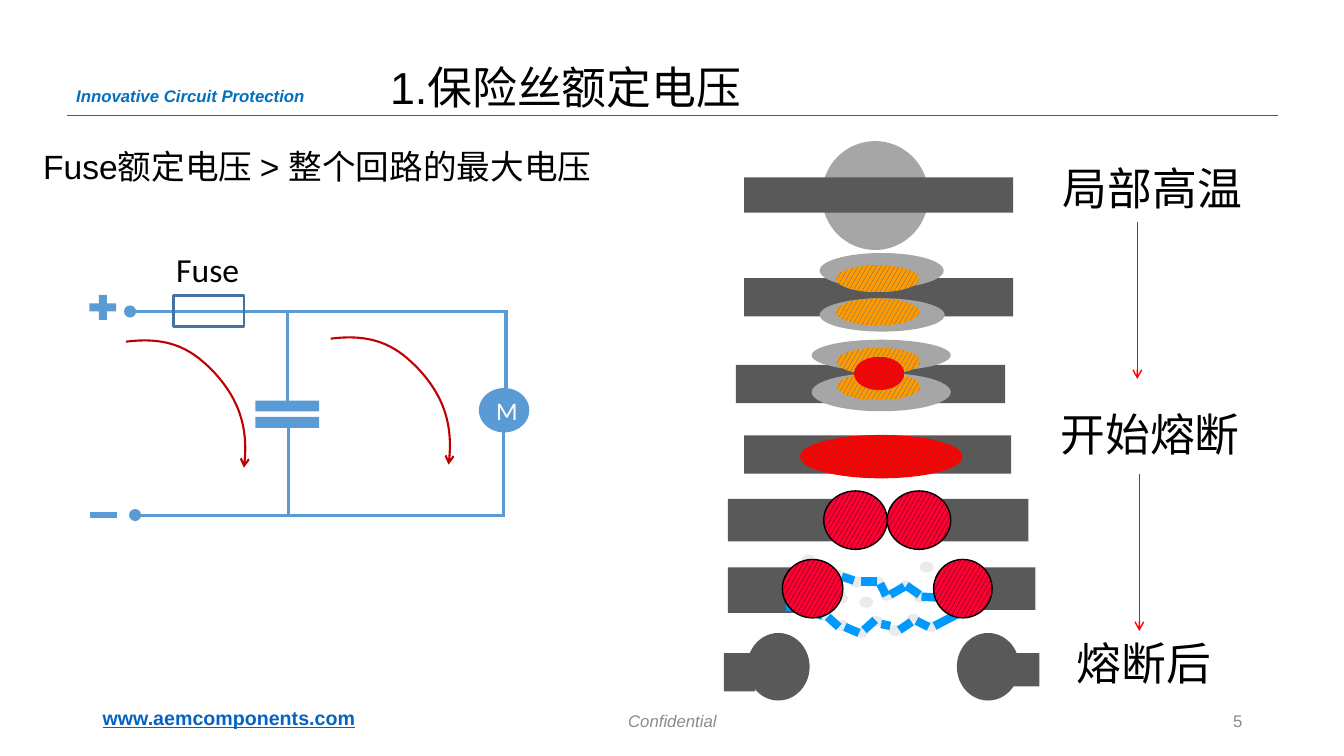
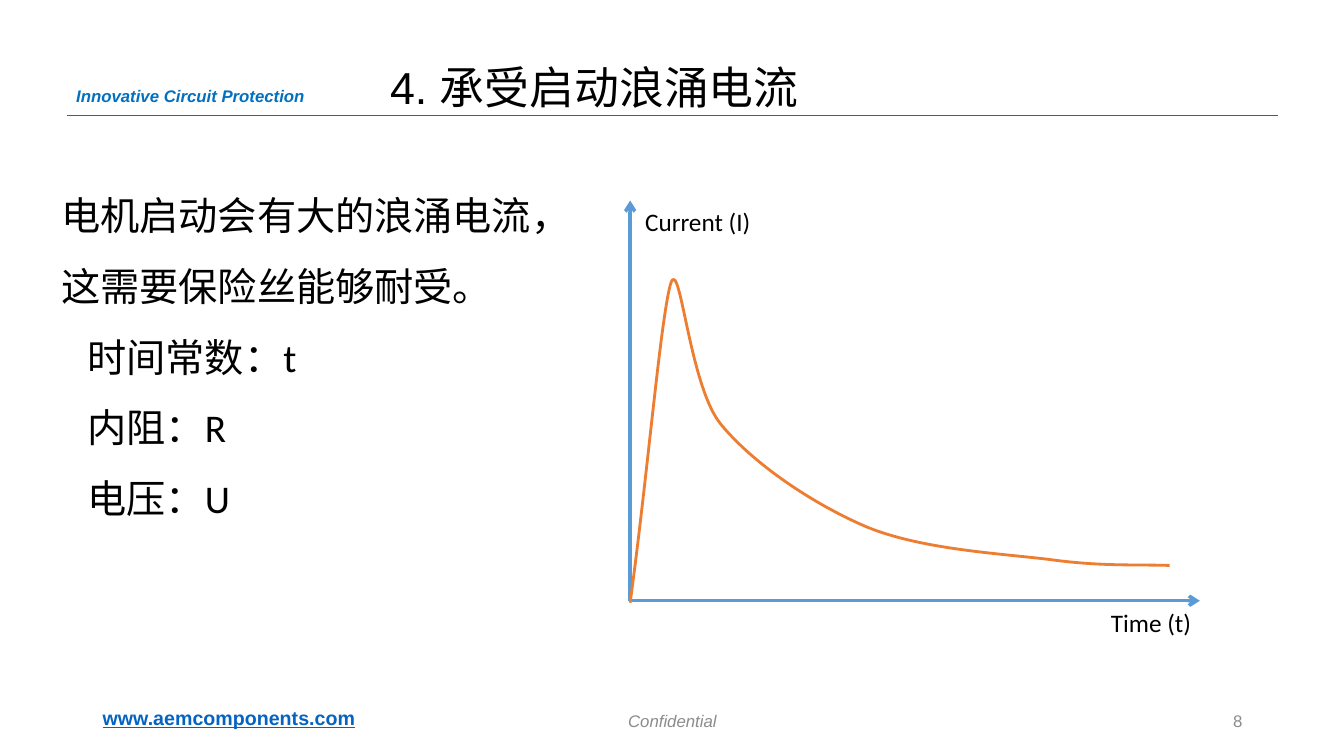
import dataclasses

import lxml.etree
import pptx
import pptx.dml.color
import pptx.enum.dml
import pptx.enum.shapes
import pptx.enum.text
import pptx.oxml.ns
import pptx.util

Inches, Pt = pptx.util.Inches, pptx.util.Pt
qn = pptx.oxml.ns.qn
SHAPE = pptx.enum.shapes.MSO_SHAPE
ALIGN = pptx.enum.text.PP_ALIGN
MIDDLE = pptx.enum.text.MSO_ANCHOR.MIDDLE
CONFETTI = pptx.enum.dml.MSO_PATTERN.LARGE_CONFETTI


@dataclasses.dataclass(frozen=True)
class Theme:
    head: str = "Arial"
    body: str = "Calibri"
    title: int = 32
    lead: int = 28
    sub: int = 24
    label: int = 18
    link: int = 14
    small: int = 12
    text: str = "000000"
    white: str = "FFFFFF"
    grey: str = "8C8C8C"
    rule: str = "595959"
    brand: str = "0070C0"
    url: str = "0563C1"
    wire: str = "5B9BD5"
    fuse: str = "43739E"
    flow: str = "C00000"
    step: str = "FF0000"
    curve: str = "ED7D31"
    spark: str = "0099FF"
    metal: str = "595959"
    glow: str = "A6A6A6"
    smoke: str = "EAEAEA"
    # patterned fills: foreground, background
    warm: tuple = ("0563C1", "FF9900")
    molten: tuple = ("44546A", "FF0000")
    drop: tuple = ("000000", "FF0033")


T = Theme()


def rgb(value):
    return pptx.dml.color.RGBColor.from_string(value)


def set_line(line, color, width, arrow=False):
    line.color.rgb = rgb(color)
    line.width = Pt(width)
    if arrow:
        ln = line._get_or_add_ln()
        lxml.etree.SubElement(ln, qn("a:tailEnd"), type="arrow")


def write(tf, lines, size, color=T.text, align=ALIGN.LEFT, spacing=None, indents=(), **fmt):
    tf.word_wrap = True
    for i, line in enumerate(lines):
        p = tf.paragraphs[0] if i == 0 else tf.add_paragraph()
        if i < len(indents):
            p._p.get_or_add_pPr().set("marL", str(Inches(indents[i])))
        p.alignment = align
        if spacing:
            p.line_spacing = spacing
        r = p.add_run()
        r.text = line
        r.font.color.rgb = rgb(color)
        for key, value in {"name": T.head, "size": Pt(size), **fmt}.items():
            setattr(r.font, key, value)


@dataclasses.dataclass
class Region:
    """Draws parts at offsets from its top left corner."""
    shapes: object
    x: float = 0
    y: float = 0

    def point(self, x, y):
        return Inches(self.x + x), Inches(self.y + y)

    def group(self, x=0, y=0):
        return Region(self.shapes.add_group_shape().shapes, self.x + x, self.y + y)

    def text(self, x, y, w, h, lines, size, anchor=None, **fmt):
        tf = self.shapes.add_textbox(*self.point(x, y), Inches(w), Inches(h)).text_frame
        if anchor is not None:
            tf.vertical_anchor = anchor
        write(tf, [lines] if isinstance(lines, str) else lines, size, **fmt)

    def shape(self, kind, x, y, w, h, fill=None, line=None):
        sp = self.shapes.add_shape(kind, *self.point(x, y), Inches(w), Inches(h))
        sp.shadow.inherit = False
        if fill is None:
            sp.fill.background()
        elif isinstance(fill, tuple):
            sp.fill.patterned()
            sp.fill.pattern = CONFETTI
            sp.fill.fore_color.rgb, sp.fill.back_color.rgb = map(rgb, fill)
        else:
            sp.fill.solid()
            sp.fill.fore_color.rgb = rgb(fill)
        if line:
            set_line(sp.line, *line)
        else:
            sp.line.fill.background()
        return sp

    def rect(self, *args, **kw):
        return self.shape(SHAPE.RECTANGLE, *args, **kw)

    def oval(self, *args, **kw):
        return self.shape(SHAPE.OVAL, *args, **kw)

    def line(self, x1, y1, x2, y2, color, width, arrow=False):
        kind = pptx.enum.shapes.MSO_CONNECTOR.STRAIGHT
        sp = self.shapes.add_connector(kind, *self.point(x1, y1), *self.point(x2, y2))
        set_line(sp.line, color, width, arrow)
        lxml.etree.SubElement(sp._element.spPr, qn("a:effectLst"))

    def bezier(self, points, color, width, arrow=False):
        """Start point, then three points for each cubic segment."""
        start, *rest = [self.point(*pt) for pt in points]
        builder = self.shapes.build_freeform(*start)
        builder.add_line_segments(rest, close=False)
        sp = builder.convert_to_shape()
        sp.shadow.inherit = False
        sp.fill.background()
        set_line(sp.line, color, width, arrow)
        outline = next(sp._element.iter(qn("a:path")))
        steps = outline.findall(qn("a:lnTo"))
        for i in range(0, len(steps), 3):
            cubic = lxml.etree.SubElement(outline, qn("a:cubicBezTo"))
            for step in steps[i:i + 3]:
                cubic.append(step[0])
                outline.remove(step)


def base_slide(prs, title, number):
    s = prs.slides.add_slide(prs.slide_layouts[6])
    page = Region(s.shapes)
    # Header
    page.text(0.6, 0.83, 2.58, 0.19, "Innovative Circuit Protection", T.small,
              color=T.brand, align=ALIGN.CENTER, spacing=0.85, bold=True, italic=True)
    page.line(0.66, 1.14, 12.68, 1.14, T.rule, 0.5)
    page.text(3.77, 0.28, 8.13, 0.91, title, T.title, spacing=1.5)
    # Footer
    page.text(0.92, 6.95, 3, 0.4, "www.aemcomponents.com", T.link,
              color=T.url, bold=True, underline=True)
    page.text(4.42, 6.95, 4.5, 0.4, "Confidential", T.small, anchor=MIDDLE,
              color=T.grey, align=ALIGN.CENTER, italic=True)
    page.text(9.42, 6.95, 3, 0.4, str(number), T.small, anchor=MIDDLE,
              color=T.grey, align=ALIGN.RIGHT)
    return page


def heating_stages(box):
    # Local heating
    g = box.group(0, 0)
    g.oval(0.95, 0, 1.06, 1.08, T.glow)
    g.rect(0.18, 0.36, 2.67, 0.35, T.metal)
    # Molten band
    g = box.group(0, 2.92)
    g.rect(0.18, 0, 2.65, 0.38, T.metal)
    g.oval(0.74, 0, 1.6, 0.42, T.molten, (T.step, 0.75))
    # Glow closing in from above and below
    g = box.group(0, 1.11)
    g.rect(0.18, 0.25, 2.67, 0.38, T.metal)
    g.oval(0.93, 0, 1.23, 0.35, T.glow)
    g.oval(0.93, 0.45, 1.24, 0.33, T.glow)
    for y in (0.12, 0.45):
        g.oval(1.09, y, 0.83, 0.27, T.warm)
    # Molten core
    g = box.group(0, 1.97)
    g.rect(0.1, 0.25, 2.67, 0.38, T.metal)
    g.oval(0.85, 0, 1.38, 0.31, T.glow)
    g.oval(0.85, 0.33, 1.38, 0.38, T.glow)
    for y in (0.08, 0.33):
        g.oval(1.1, y, 0.83, 0.27, T.warm)
    g.oval(1.27, 0.17, 0.5, 0.33, T.molten)


def breaking_stages(box):
    # Two drops touching
    g = box.group(0, 0)
    for bar_x, drop_x in ((1.84, 1.6), (0.02, 0.97)):
        g.rect(bar_x, 0.08, 1.16, 0.42, T.metal)
        g.oval(drop_x, 0, 0.63, 0.58, T.drop, (T.text, 1))
    arc(box.group(0, 0.63))
    # Open ends
    g = box.group(0, 1.41)
    g.rect(-0.02, 0.2, 0.31, 0.38, T.metal)
    g.rect(2.83, 0.2, 0.28, 0.33, T.metal)
    for x in (0.21, 2.29):
        g.oval(x, 0, 0.62, 0.67, T.metal)


def arc(box):
    # Smoke
    for x, y in ((1.23, 0.22), (1.07, 0.38), (1.32, 0.42), (1.53, 0.35), (1.71, 0.26),
                 (1.43, 0.22), (1.79, 0.59), (1.61, 0.7), (1.27, 0.72), (2.1, 0.37),
                 (2.27, 0.52), (1.97, 0.66), (0.91, 0.55), (0.84, 0.26), (2.25, 0.22),
                 (1.08, 0.65), (1.42, 0.61), (1.04, 0.15), (1.86, 0.37), (0.71, 0.48),
                 (1.92, 0.07), (0.75, 0), (2.24, 0.05), (2.42, 0.15)):
        box.oval(x, y, 0.14, 0.11, T.smoke)
    # Sparks behind and in front of the bars
    behind = ((0.86, 0.3, 0.6, 0.31), (2.07, 0.71, 2.32, 0.58), (1.37, 0.75, 1.48, 0.65),
              (1.54, 0.69, 1.63, 0.71), (1.89, 0.66, 2.01, 0.72), (2.35, 0.57, 2.67, 0.4))
    front = ((0.75, 0.52, 0.6, 0.52), (0.83, 0.56, 0.96, 0.61), (1.01, 0.62, 1.12, 0.72),
             (1.18, 0.72, 1.32, 0.78), (1.72, 0.75, 1.84, 0.67), (0.95, 0.33, 1.07, 0.22),
             (1.15, 0.22, 1.27, 0.26), (1.34, 0.27, 1.5, 0.27), (1.53, 0.29, 1.59, 0.41),
             (1.63, 0.4, 1.77, 0.32), (1.79, 0.31, 1.92, 0.4), (1.94, 0.42, 2.15, 0.43),
             (2.22, 0.4, 2.31, 0.27), (2.35, 0.28, 2.47, 0.19))
    for ends in behind:
        box.line(*ends, T.spark, 6)
    box.rect(2.4, 0.13, 0.67, 0.42, T.metal)
    box.rect(0.02, 0.13, 0.71, 0.45, T.metal)
    for ends in front:
        box.line(*ends, T.spark, 6)
    # Separated drops
    for x, w in ((2.06, 0.58), (0.56, 0.6)):
        box.oval(x, 0.05, w, 0.58, T.drop, (T.text, 1))


def stage_labels(box):
    for x, y, label in ((0.02, 0, "局部高温"), (0, 2.44, "开始熔断"), (0.16, 4.71, "熔断后")):
        box.text(x, y, 2.42, 0.64, label, T.title)
    for x, y in ((0.86, 0.65), (0.88, 3.15)):
        box.line(x, y, x, y + 1.56, T.step, 1, arrow=True)


def circuit(box):
    # Terminals, fuse and wires
    box.oval(0.39, 0.61, 0.12, 0.12, T.wire)
    box.oval(0.44, 2.63, 0.12, 0.12, T.wire)
    box.line(0.45, 0.67, 4.19, 0.67, T.wire, 2.25)
    box.rect(0.88, 0.51, 0.7, 0.31, line=(T.fuse, 2))
    box.line(0.49, 2.69, 4.15, 2.69, T.wire, 2.25)
    box.shape(SHAPE.MATH_PLUS, 0, 0.46, 0.36, 0.34, T.wire)
    box.shape(SHAPE.MATH_MINUS, 0.01, 2.57, 0.36, 0.24, T.wire)
    # Capacitor branch
    box.shape(SHAPE.MATH_EQUAL, 1.58, 1.46, 0.86, 0.46, T.wire)
    box.line(2.01, 0.67, 2.01, 1.56, T.wire, 2.5)
    box.line(2.02, 1.8, 2.02, 2.69, T.wire, 2)
    # Motor branch
    box.line(4.18, 0.66, 4.18, 1.55, T.wire, 2.75)
    motor = box.oval(3.91, 1.43, 0.5, 0.44, T.wire)
    motor.text_frame.vertical_anchor = MIDDLE
    write(motor.text_frame, ["M"], T.label, T.white, ALIGN.CENTER, name=T.body)
    box.line(4.15, 1.82, 4.15, 2.71, T.wire, 2)
    box.text(0.81, 0, 0.93, 0.5, "Fuse", T.sub, name=T.body)
    # Current paths
    bend = ((0, 0), (0.46, -0.06), (0.68, 0.1), (0.88, 0.31),
            (1.07, 0.52), (1.23, 0.81), (1.17, 1.25))
    for x, y in ((2.44, 0.94), (0.41, 0.97)):
        box.bezier([(x + dx, y + dy) for dx, dy in bend], T.flow, 1.5, arrow=True)


def inrush_graph(box):
    g = box.group()
    # Axes from the shared zero point
    for x, y in ((5.65, 3.97), (0, 0)):
        g.line(0, 3.97, x, y, T.wire, 2.5, arrow=True)
    box.bezier(((0, 3.99), (0.17, 2.74), (0.29, 1.31), (0.39, 0.87),
                (0.49, 0.42), (0.57, 1.82), (0.9, 2.22),
                (1.22, 2.61), (1.81, 3.01), (2.35, 3.24),
                (2.89, 3.46), (3.65, 3.5), (4.15, 3.56),
                (4.65, 3.63), (4.99, 3.61), (5.35, 3.62)), T.curve, 2)
    box.text(0.05, 0.01, 2.19, 0.4, "Current (I)", T.label, name=T.body)
    box.text(4.67, 3.99, 1.16, 0.4, "Time (t)", T.label, name=T.body)


def voltage_slide(prs):
    page = base_slide(prs, "1.保险丝额定电压", 5)
    heating_stages(Region(page.shapes, 7.2, 1.4))
    breaking_stages(Region(page.shapes, 7.2, 4.87))
    stage_labels(Region(page.shapes, 10.42, 1.55))
    circuit(Region(page.shapes, 0.84, 2.42))
    page.text(0.33, 1.4, 5.97, 0.5, "Fuse额定电压 > 整个回路的最大电压", T.sub)


def inrush_slide(prs):
    page = base_slide(prs, "4. 承受启动浪涌电流", 8)
    inrush_graph(Region(page.shapes, 6.25, 1.99))
    lines = ["电机启动会有大的浪涌电流，这需要保险丝能够耐受。", "时间常数：t", "内阻：R", "电压：U"]
    page.text(0.51, 1.62, 5.26, 3.64, lines, T.lead, spacing=1.5,
              indents=(0, 0.26, 0.26, 0.26), name=T.body)


def main():
    prs = pptx.Presentation()
    prs.slide_width, prs.slide_height = Inches(13.33), Inches(7.5)
    voltage_slide(prs)
    inrush_slide(prs)
    prs.save("out.pptx")


if __name__ == "__main__":
    main()
